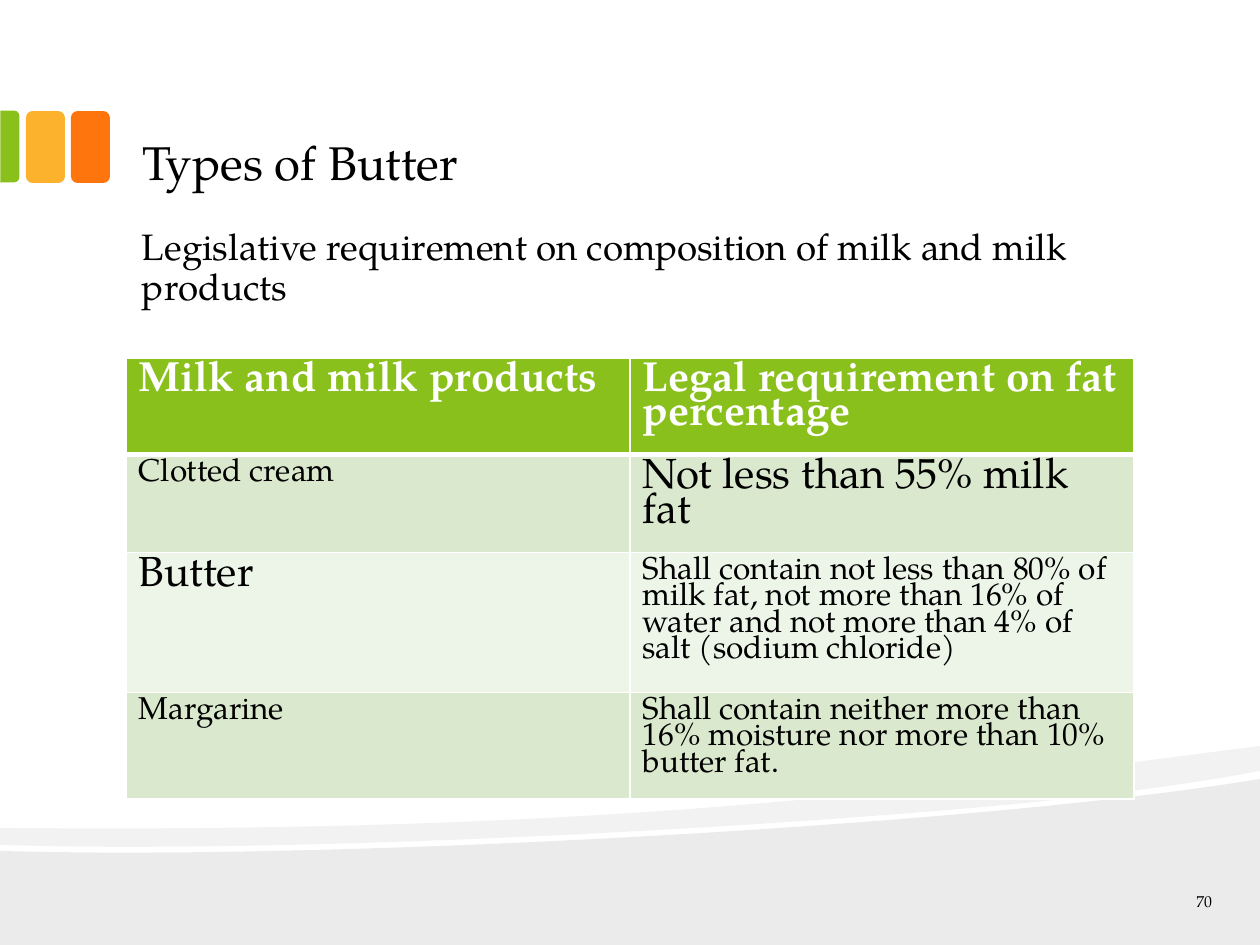
from lxml.etree import SubElement
from pptx import Presentation
from pptx.dml.color import RGBColor
from pptx.enum.shapes import MSO_SHAPE as Preset
from pptx.enum.text import MSO_ANCHOR as Anchor, PP_ALIGN as Align
from pptx.oxml.ns import qn
from pptx.util import Pt

PX = 914400 / 126
FONT = "TeX Gyre Pagella"
COLORS = {
    "ink": "000000", "white": "FFFFFF", "green": "89C01C", "yellow": "FCB22C",
    "orange": "FE750E", "band_dark": "DAE8CD", "band_light": "EDF4E8",
}
# Each cell: wording and text size
ROWS = [
    (93, [("Milk and milk products", 24), ("Legal requirement on fat percentage", 24)]),
    (98, [("Clotted cream", 18), ("Not less than 55% milk fat", 24)]),
    (140, [("Butter", 24),
           ("Shall contain not less than 80% of milk fat, not more than 16% of water "
            "and not more than 4% of salt (sodium chloride)", 18)]),
    (107, [("Margarine", 18),
           ("Shall contain neither more than 16% moisture nor more than 10% butter fat.", 18)]),
]


def px(*lengths):
    return [round(length * PX) for length in lengths]


def rgb(name):
    return RGBColor.from_string(COLORS[name])


def paint(shape, color):
    shape.shadow.inherit = False
    shape.fill.solid()
    shape.fill.fore_color.rgb = rgb(color)
    shape.line.fill.background()


def write(frame, text, size, color="ink", bold=False, spacing=None, align=Align.LEFT):
    frame.text = text
    paragraph = frame.paragraphs[0]
    paragraph.alignment = align
    if spacing:
        paragraph.line_spacing = spacing
    font = paragraph.runs[0].font
    font.name, font.size, font.bold = FONT, Pt(size), bold
    font.color.rgb = rgb(color)


def set_frame(frame, anchor):
    frame.word_wrap = True
    frame.vertical_anchor = anchor
    frame.margin_left, frame.margin_right = px(16, 16)
    frame.margin_top, frame.margin_bottom = px(9, 9)


def add_text(slide, box, text, size, anchor=Anchor.TOP, **style):
    frame = slide.shapes.add_textbox(*px(*box)).text_frame
    set_frame(frame, anchor)
    write(frame, text, size, **style)


def curve(start, first, second, end, steps=24):
    """Points along a cubic Bezier curve, without its start."""
    def at(t):
        u = 1 - t
        return tuple(u**3 * a + 3 * u * u * t * b + 3 * u * t * t * c + t**3 * d
                     for a, b, c, d in zip(start, first, second, end))
    return [at(step / steps) for step in range(1, steps + 1)]


def add_wave(slide, points, opacity):
    start, *rest = [tuple(px(*point)) for point in points]
    builder = slide.shapes.build_freeform(*start)
    builder.add_line_segments(rest, close=True)
    wave = builder.convert_to_shape()
    paint(wave, "ink")
    color = wave.fill._xPr.find(qn("a:solidFill"))[0]
    SubElement(color, qn("a:alpha"), val=str(opacity * 1000))


def add_tab(slide, preset, box, color):
    tab = slide.shapes.add_shape(preset, *px(*box))
    paint(tab, color)
    return tab


def add_borders(cell, bottom):
    properties = cell._tc.get_or_add_tcPr()
    widths = {"a:lnL": 1, "a:lnR": 1, "a:lnT": 1, "a:lnB": bottom}
    for index, (side, width) in enumerate(widths.items()):
        line = SubElement(properties, qn(side), w=str(Pt(width)))
        SubElement(SubElement(line, qn("a:solidFill")), qn("a:srgbClr"), val=COLORS["white"])
        properties.insert(index, line)


def add_requirements(slide):
    height = sum(row_height for row_height, _ in ROWS)
    table = slide.shapes.add_table(len(ROWS), 2, *px(126, 358, 1008, height)).table
    for r, (row_height, entries) in enumerate(ROWS):
        header = r == 0
        fill = "green" if header else "band_dark" if r % 2 else "band_light"
        table.rows[r].height = px(row_height)[0]
        for c, (text, size) in enumerate(entries):
            cell = table.cell(r, c)
            cell.fill.solid()
            cell.fill.fore_color.rgb = rgb(fill)
            write(cell.text_frame, text, size, "white" if header else "ink", header, 0.83)
            add_borders(cell, 3 if header else 1)


def main():
    deck = Presentation()
    deck.slide_width, deck.slide_height = px(1260, 945)
    slide = deck.slides.add_slide(deck.slide_layouts[5])

    # Grey waves along the bottom
    add_wave(slide, [(1260, 779), (1260, 945), (0, 945), (0, 851),
                     *curve((0, 851), (333, 861), (985, 825), (1260, 779))], 8)
    add_wave(slide, [(1260, 746), (1260, 771),
                     *curve((1260, 771), (1187, 785), (1086, 798), (973, 808)),
                     *curve((973, 808), (659, 835), (243, 853), (0, 845)),
                     (0, 828),
                     *curve((0, 828), (616, 834), (917, 790), (1260, 746))], 5)

    # Coloured tabs at the left edge
    add_tab(slide, Preset.ROUNDED_RECTANGLE, (71, 111, 39, 72), "orange")
    add_tab(slide, Preset.ROUNDED_RECTANGLE, (26, 111, 39, 72), "yellow")
    edge_tab = add_tab(slide, Preset.ROUND_2_SAME_RECTANGLE, (-26, 137, 72, 19), "green")
    edge_tab.rotation = 90
    edge_tab.adjustments[0] = 0.29

    # Title and introduction
    title = slide.shapes.title
    title.left, title.top, title.width, title.height = px(126, 21, 1008, 179)
    set_frame(title.text_frame, Anchor.BOTTOM)
    write(title.text_frame, "Types of Butter", 27, spacing=0.9)
    add_text(slide, (126, 220, 1008, 630),
             "Legislative requirement on composition of milk and milk products",
             21, spacing=0.9)

    add_requirements(slide)

    # Slide number
    add_text(slide, (1144, 888, 84, 26), "70", 9, Anchor.MIDDLE, align=Align.RIGHT)
    deck.save("out.pptx")


if __name__ == "__main__":
    main()
